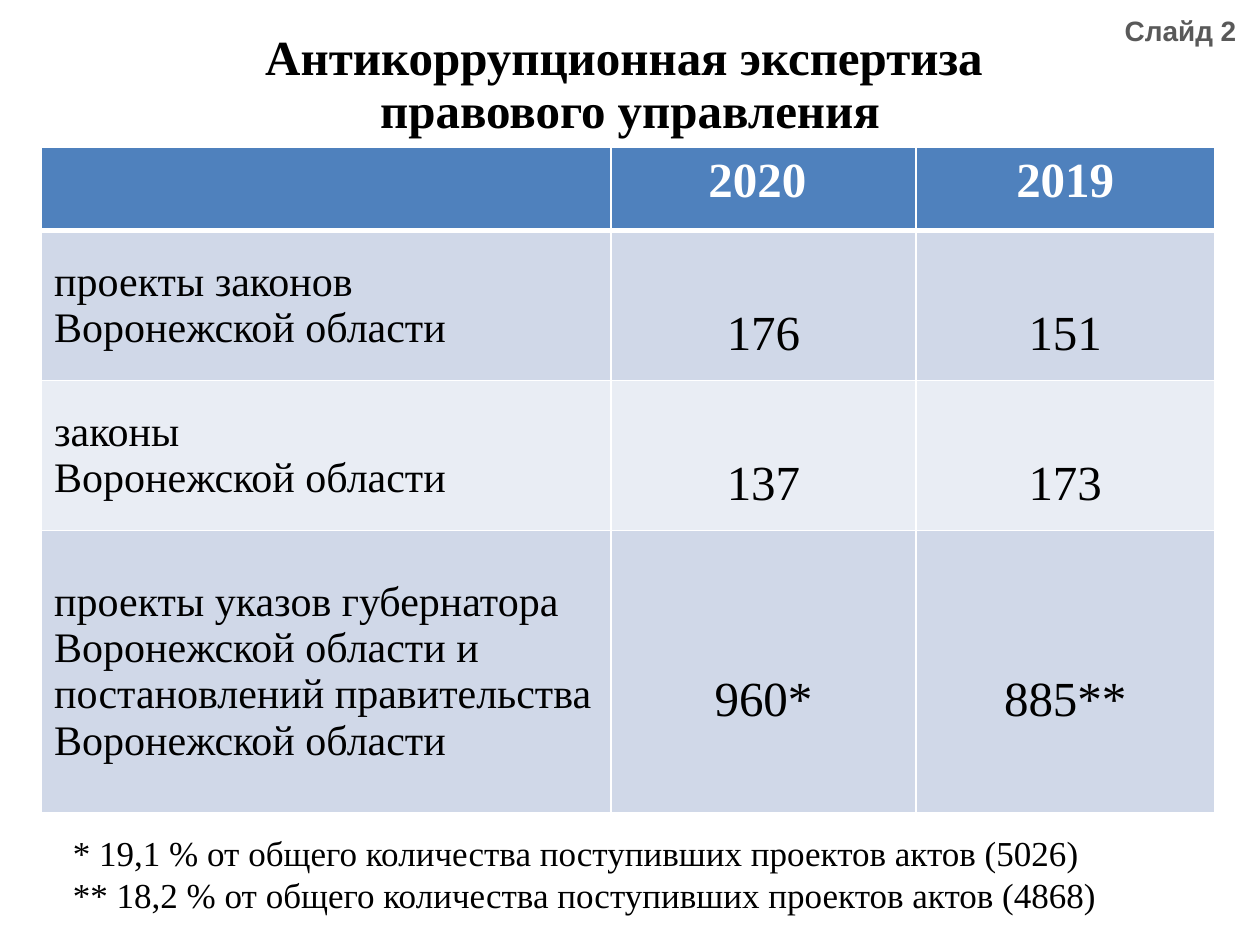
"""Build the slide on anti-corruption review of legal acts."""
from copy import deepcopy
from dataclasses import dataclass

from lxml import etree
from pptx import Presentation
from pptx.dml.color import RGBColor
from pptx.enum.text import MSO_ANCHOR, MSO_AUTO_SIZE, PP_ALIGN
from pptx.oxml.ns import qn
from pptx.util import Inches, Pt

LEFT, CENTER, RIGHT = PP_ALIGN.LEFT, PP_ALIGN.CENTER, PP_ALIGN.RIGHT
TOP, MIDDLE = MSO_ANCHOR.TOP, MSO_ANCHOR.MIDDLE
NO_FIT, GROW = MSO_AUTO_SIZE.NONE, MSO_AUTO_SIZE.SHAPE_TO_FIT_TEXT
TITLE_ONLY = 5


@dataclass(frozen=True)
class Theme:
    serif: str = "Times New Roman"
    sans: str = "Arial"
    ink: str = "000000"
    paper: str = "FFFFFF"
    muted: str = "595959"
    header: str = "4F81BD"
    bands: tuple = ("D0D8E8", "E9EDF4")
    heading: int = 28
    label: int = 24
    note: int = 20
    marker: int = 16
    rule: int = 1
    header_rule: int = 3


def write(frame, lines, *, font, size, color, bold=False, align=LEFT, spacing=None):
    for index, line in enumerate(lines):
        paragraph = frame.paragraphs[0] if index == 0 else frame.add_paragraph()
        paragraph.text = line
        paragraph.alignment = align
        paragraph.line_spacing = spacing
        for run in paragraph.runs:
            run.font.name = font
            run.font.size = Pt(size)
            run.font.bold = bold
            run.font.color.rgb = RGBColor.from_string(color)
        for line_break in paragraph._p.findall(qn("a:br")):
            line_break.append(deepcopy(paragraph.runs[0]._r.rPr))


class SlideBuilder:
    def __init__(self, slide, theme):
        self.slide = slide
        self.theme = theme

    def title(self, text, box):
        heading = self.slide.shapes.title
        heading.left, heading.top, heading.width, heading.height = map(Inches, box)
        frame = heading.text_frame
        frame.auto_size = NO_FIT
        frame.vertical_anchor = MIDDLE
        write(frame, [text], font=self.theme.serif, size=self.theme.heading,
              color=self.theme.ink, bold=True, align=CENTER, spacing=0.9)

    def text(self, lines, box, **style):
        frame = self.slide.shapes.add_textbox(*map(Inches, box)).text_frame
        frame.word_wrap = True
        frame.auto_size = GROW
        write(frame, lines, **style)

    def borders(self, cell, top, bottom):
        widths = {"L": self.theme.rule, "R": self.theme.rule, "T": top, "B": bottom}
        properties = cell._tc.get_or_add_tcPr()
        for position, (side, width) in enumerate(widths.items()):
            edge = etree.Element(qn(f"a:ln{side}"), w=str(Pt(width)))
            fill = etree.SubElement(edge, qn("a:solidFill"))
            etree.SubElement(fill, qn("a:srgbClr"), val=self.theme.paper)
            properties.insert(position, edge)

    def cell(self, cell, lines, row, column):
        theme = self.theme
        is_header, is_label = row == 0, column == 0
        cell.fill.solid()
        cell.fill.fore_color.rgb = RGBColor.from_string(
            theme.header if is_header else theme.bands[(row - 1) % 2])
        self.borders(cell, theme.header_rule if row == 1 else theme.rule,
                     theme.header_rule if is_header else theme.rule)
        cell.vertical_anchor = TOP if is_header else MIDDLE
        if not is_header and not is_label:
            cell.margin_top = Inches(0.5)
        write(cell.text_frame, lines, font=theme.serif,
              size=theme.label if is_label else theme.heading,
              color=theme.paper if is_header else theme.ink,
              bold=is_header, align=LEFT if is_label else CENTER)

    def table(self, rows, box, widths, heights):
        grid = self.slide.shapes.add_table(
            len(rows), len(widths), *map(Inches, box)).table
        for column, width in zip(grid.columns, widths):
            column.width = Inches(width)
        for line, height in zip(grid.rows, heights):
            line.height = Inches(height)
        for row, entries in enumerate(rows):
            for column, entry in enumerate(entries):
                self.cell(grid.cell(row, column), entry.split("\n"), row, column)


def main():
    presentation = Presentation()
    presentation.slide_width, presentation.slide_height = Inches(10), Inches(7.5)
    theme = Theme()
    slide = presentation.slides.add_slide(presentation.slide_layouts[TITLE_ONLY])
    builder = SlideBuilder(slide, theme)

    builder.title("Антикоррупционная экспертиза \vправового управления",
                  (0.5, 0.06, 9, 1.25))
    reviews = [
        ("", "2020 ", "2019"),
        ("проекты законов\nВоронежской области", "176", "151"),
        ("законы\nВоронежской области", "137", "173"),
        ("проекты указов губернатора Воронежской области и "
         "постановлений правительства Воронежской области", "960*", "885**"),
    ]
    builder.table(reviews, (0.33, 1.17, 9.31, 5.28),
                  widths=(4.52, 2.42, 2.37), heights=(0.66, 1.19, 1.19, 2.24))
    footnotes = [
        "* 19,1 % от общего количества поступивших проектов актов (5026)",
        "** 18,2 % от общего количества поступивших проектов актов (4868)",
    ]
    builder.text(footnotes, (0.48, 6.55, 9, 0.77),
                 font=theme.serif, size=theme.note, color=theme.ink)
    builder.text(["Слайд 2"], (8.59, 0.06, 1.32, 0.37), font=theme.sans,
                 size=theme.marker, color=theme.muted, bold=True, align=RIGHT)
    presentation.save("out.pptx")


if __name__ == "__main__":
    main()
